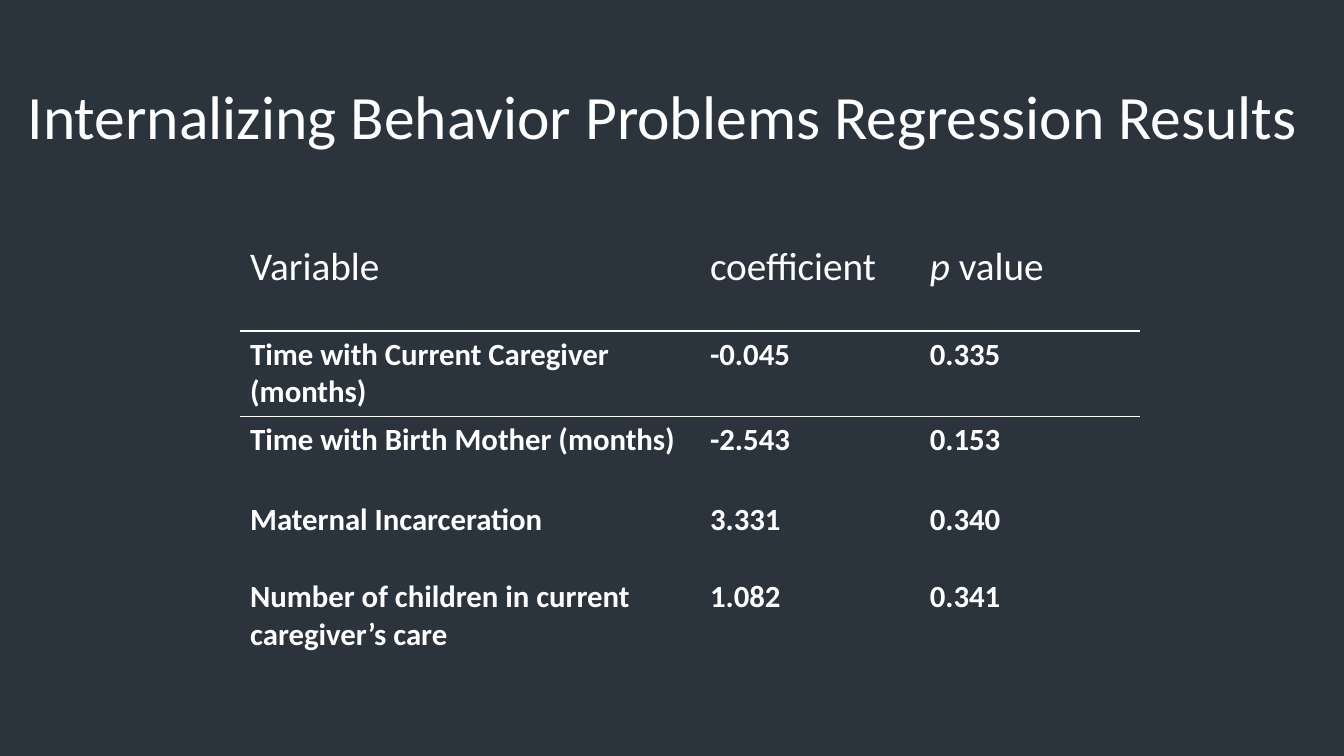
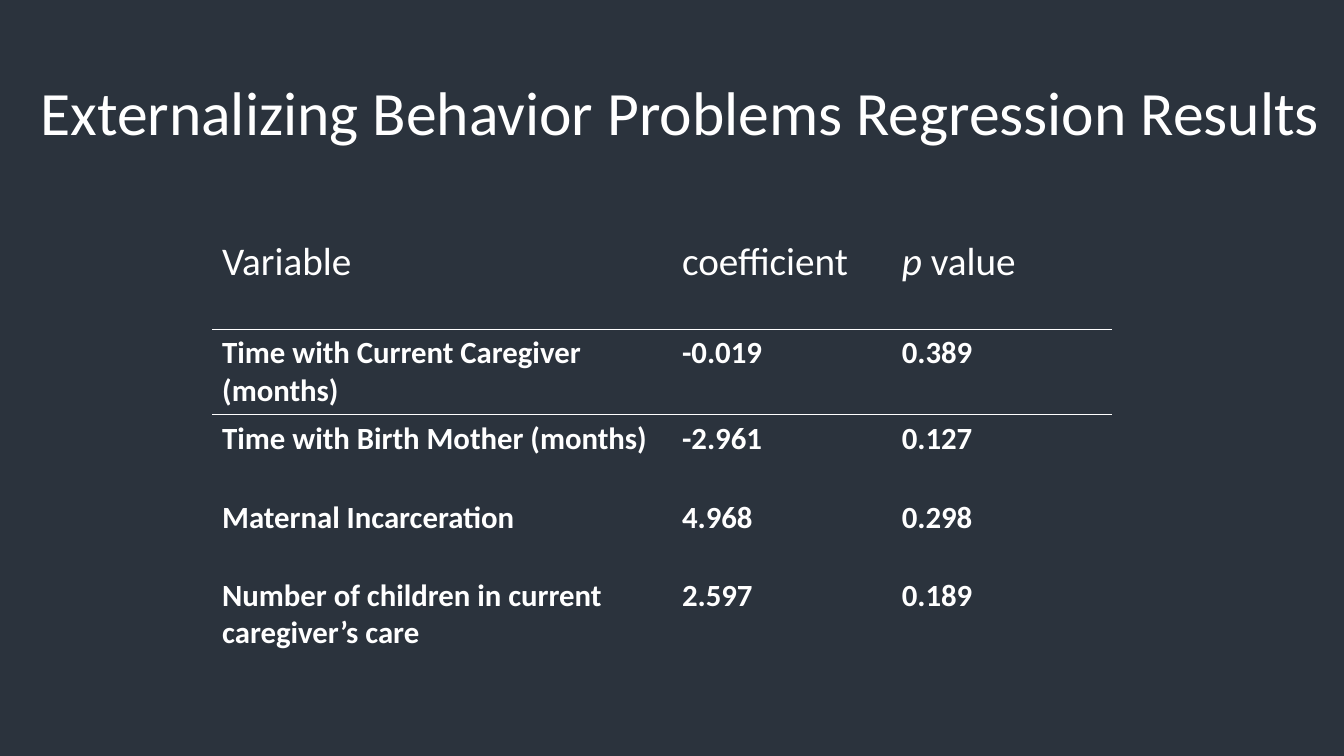
from lxml.etree import SubElement
from pptx import Presentation
from pptx.dml.color import RGBColor as Rgb
from pptx.enum.text import MSO_ANCHOR as Anchor, MSO_AUTO_SIZE as AutoSize, PP_ALIGN as Align
from pptx.oxml.ns import qn
from pptx.util import Pt

COLORS = {"background": "2B333D", "text": "FFFFFF", "rule": "FFFFFF"}
FONT = "Calibri"
NO_STYLE_NO_GRID = "{2D5ABB26-0587-4C30-8999-92F81FD0307C}"
TITLE_ONLY = 5

COLUMN_WIDTHS = [328.5, 157, 157]
BODY_HEIGHTS = [60.5, 57, 55.5, 55.5]
HEADER = [[("Variable", False)], [("coefficient", False)], [("p", True), (" value", False)]]
VARIABLES = [
    "Time with Current Caregiver (months)",
    "Time with Birth Mother (months)",
    "Maternal Incarceration",
    "Number of children in current caregiver’s care",
]

RESULTS = [
    {
        "title": "Internalizing Behavior Problems Regression Results",
        "title_box": (12.5, 52, 931.5, 82),
        "table_origin": (171.5, 170),
        "header_height": 66.5,
        "estimates": [("-0.045", "0.335"), ("-2.543", "0.153"),
                      ("3.331", "0.340"), ("1.082", "0.341")],
    },
    {
        "title": "Externalizing Behavior Problems Regression Results",
        "title_box": (21.5, 49.5, 938.5, 60.5),
        "table_origin": (151.5, 166.5),
        "header_height": 69,
        "estimates": [("-0.019", "0.389"), ("-2.961", "0.127"),
                      ("4.968", "0.298"), ("2.597", "0.189")],
    },
]


def add_run(paragraph, text, size, bold=False, italic=False):
    """Append one formatted run to a paragraph."""
    run = paragraph.add_run()
    run.text = text
    font = run.font
    font.name, font.size, font.bold, font.italic = FONT, Pt(size), bold, italic
    font.color.rgb = Rgb.from_string(COLORS["text"])


def place_title(slide, text, box):
    """Move the title placeholder into its box and write the heading."""
    title = slide.shapes.title
    title.left, title.top, title.width, title.height = map(Pt, box)
    frame = title.text_frame
    frame.word_wrap = False
    frame.auto_size = AutoSize.NONE
    frame.vertical_anchor = Anchor.TOP
    heading = frame.paragraphs[0]
    heading.alignment = Align.LEFT
    add_run(heading, text, 44)


def rule_cell(cell, edge):
    """Draw a thin rule on one edge of a cell, given as lnT or lnB."""
    rule = SubElement(cell._tc.get_or_add_tcPr(), qn(f"a:{edge}"), w=str(Pt(1)))
    fill = SubElement(rule, qn("a:solidFill"))
    SubElement(fill, qn("a:srgbClr"), val=COLORS["rule"])


def place_table(slide, origin, header_height, estimates):
    """Build the regression table from its top left corner."""
    heights = [header_height, *BODY_HEIGHTS]
    frame = slide.shapes.add_table(
        len(heights), len(COLUMN_WIDTHS), *map(Pt, origin),
        Pt(sum(COLUMN_WIDTHS)), Pt(sum(heights)))
    table = frame.table
    table.first_row = table.horz_banding = False
    table._tbl.tblPr.find(qn("a:tableStyleId")).text = NO_STYLE_NO_GRID
    for column, width in zip(table.columns, COLUMN_WIDTHS):
        column.width = Pt(width)
    for row, height in zip(table.rows, heights):
        row.height = Pt(height)

    body = [[[(text, False)] for text in (variable, *pair)]
            for variable, pair in zip(VARIABLES, estimates)]
    edges = {0: "lnB", 1: "lnT"}
    for row_index, entries in enumerate([HEADER, *body]):
        is_body = row_index > 0
        for column_index, entry in enumerate(entries):
            cell = table.cell(row_index, column_index)
            if row_index in edges:
                rule_cell(cell, edges[row_index])
            cell.fill.background()
            for text, italic in entry:
                add_run(cell.text_frame.paragraphs[0], text,
                        22 if is_body else 28, is_body, italic)


def add_results_slide(deck, result):
    """Add one slide with a heading and its regression table."""
    slide = deck.slides.add_slide(deck.slide_layouts[TITLE_ONLY])
    place_title(slide, result["title"], result["title_box"])
    place_table(slide, result["table_origin"], result["header_height"], result["estimates"])


def main():
    """Build and save the presentation."""
    deck = Presentation()
    deck.slide_width, deck.slide_height = Pt(960), Pt(540)
    backdrop = deck.slide_master.background.fill
    backdrop.solid()
    backdrop.fore_color.rgb = Rgb.from_string(COLORS["background"])
    for result in RESULTS:
        add_results_slide(deck, result)
    deck.save("out.pptx")


if __name__ == "__main__":
    main()
